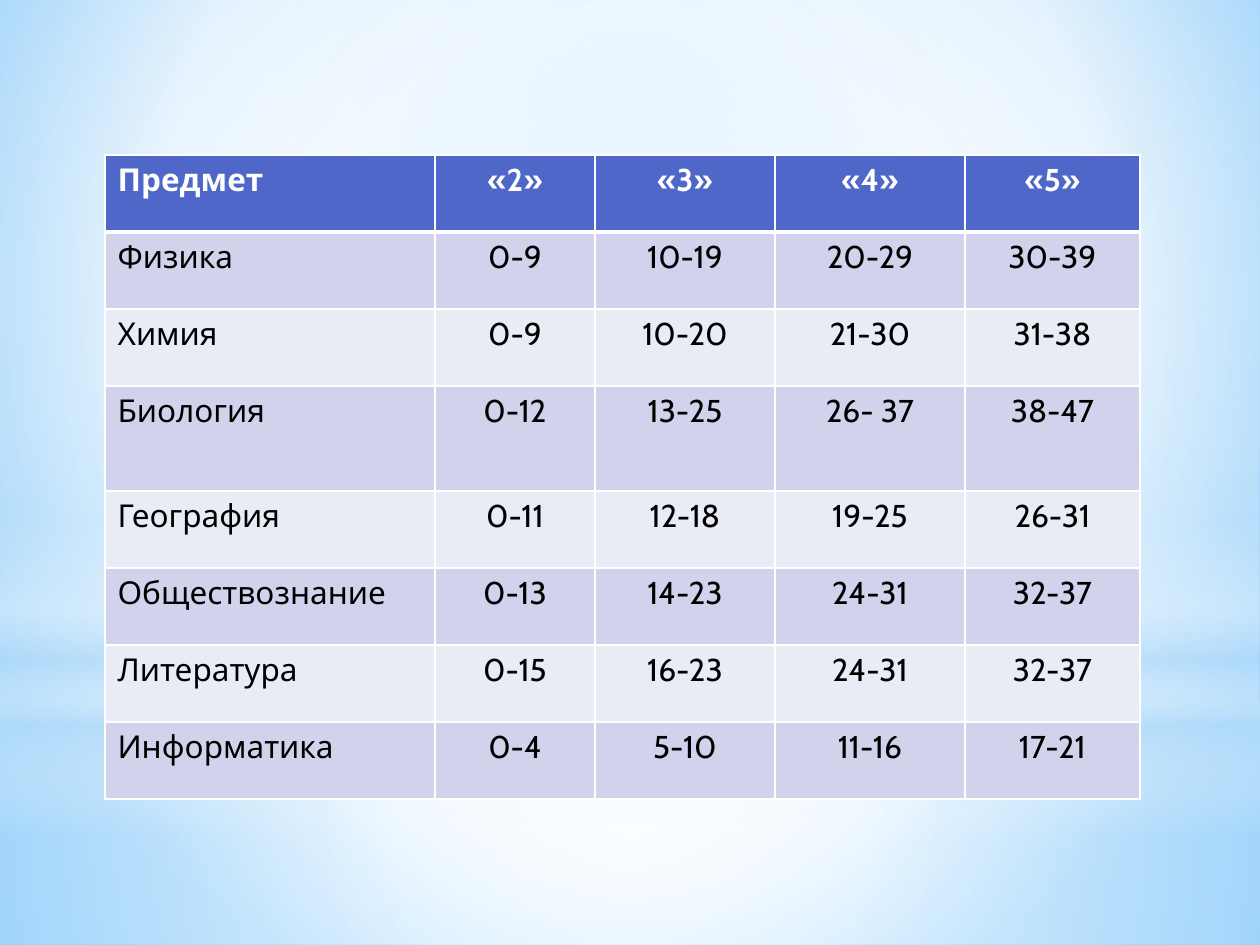
from lxml import etree
from pptx import Presentation
from pptx.dml.color import RGBColor
from pptx.enum.shapes import MSO_SHAPE
from pptx.enum.text import PP_ALIGN
from pptx.oxml.ns import qn
from pptx.util import Emu, Pt

RECT, OVAL = MSO_SHAPE.RECTANGLE, MSO_SHAPE.OVAL
LEFT, CENTER = PP_ALIGN.LEFT, PP_ALIGN.CENTER
PX = 914400 / 126
FONT = "Cabin"
COLORS = {
    "white": "FFFFFF", "black": "000000", "header": "4E67C8",
    "band": "D0D3EB", "light": "E9EBF5", "haze": "B4DCFA",
    "sky": "9ED5FF", "blue": "5BB9FF",
}
MIDDLE = (50, 50, 50, 50)

COL_WIDTHS = [330, 160, 180, 190, 175]
ROW_HEIGHTS = [77, 77, 77, 105, 77, 77, 77, 77]
GRADES = [
    ["Предмет", "«2»", "«3»", "«4»", "«5»"],
    ["Физика", "0-9", "10-19", "20-29", "30-39"],
    ["Химия", "0-9", "10-20", "21-30", "31-38"],
    ["Биология", "0-12", "13-25", "26- 37", "38-47"],
    ["География", "0-11", "12-18", "19-25", "26-31"],
    ["Обществознание", "0-13", "14-23", "24-31", "32-37"],
    ["Литература", "0-15", "16-23", "24-31", "32-37"],
    ["Информатика", "0-4", "5-10", "11-16", "17-21"],
]


def px(n):
    return Emu(round(n * PX))


def rgb(name):
    return RGBColor.from_string(COLORS[name])


def add_color(parent, name):
    return etree.SubElement(parent, qn("a:srgbClr"), val=COLORS[name])


def set_gradient(owner, element, stops, center=None):
    """Fill with (position, colour, opacity) stops: circular around center, else downwards."""
    owner.fill.gradient()
    old = element.find(".//" + qn("a:gradFill"))
    grad = etree.Element(qn("a:gradFill"), rotWithShape="1")
    gs_list = etree.SubElement(grad, qn("a:gsLst"))
    for pos, name, opacity in stops:
        gs = etree.SubElement(gs_list, qn("a:gs"), pos=str(pos * 1000))
        color = add_color(gs, name)
        if opacity < 100:
            etree.SubElement(color, qn("a:alpha"), val=str(opacity * 1000))
    if center:
        circle = etree.SubElement(grad, qn("a:path"), path="circle")
        sides = {side: str(n * 1000) for side, n in zip("ltrb", center)}
        etree.SubElement(circle, qn("a:fillToRect"), **sides)
    else:
        etree.SubElement(grad, qn("a:lin"), ang="5400000", scaled="0")
    old.getparent().replace(old, grad)


def add_glow(slide, kind, top, height, stops, center=None):
    s = slide.shapes.add_shape(kind, 0, px(top), px(1260), px(height))
    s.shadow.inherit = False
    s.line.fill.background()
    set_gradient(s, s._element, stops, center)


def add_backdrop(slide):
    set_gradient(slide.background, slide._element,
                 [(0, "sky", 100), (60, "white", 100), (100, "blue", 100)],
                 (20, 10, 20, 60))
    add_glow(slide, RECT, 703, 242,
             [(0, "white", 91), (37, "white", 76), (100, "haze", 79)], MIDDLE)
    add_glow(slide, RECT, 0, 703,
             [(0, "white", 89), (48, "white", 62), (100, "haze", 79)], MIDDLE)
    add_glow(slide, RECT, 519, 315,
             [(0, "white", 0), (29, "white", 30), (45, "haze", 40),
              (55, "white", 26), (65, "haze", 60), (100, "white", 0)])
    add_glow(slide, OVAL, 220, 703,
             [(0, "white", 100), (56, "white", 0)], MIDDLE)


def set_borders(cell, top, bottom):
    tc_pr = cell._tc.get_or_add_tcPr()
    for i, (side, width) in enumerate(zip("LRTB", (1, 1, top, bottom))):
        ln = etree.Element(qn("a:ln" + side), w=str(Pt(width)))
        add_color(etree.SubElement(ln, qn("a:solidFill")), "white")
        tc_pr.insert(i, ln)


def fill_cell(cell, text, row, col):
    header = row == 0
    cell.fill.solid()
    cell.fill.fore_color.rgb = rgb("header" if header else "band" if row % 2 else "light")
    set_borders(cell, 3 if row == 1 else 1, 3 if header else 1)
    p = cell.text_frame.paragraphs[0]
    p.alignment = CENTER if col else LEFT
    r = p.add_run()
    r.text = text
    r.font.name = FONT
    r.font.size = Pt(18)
    r.font.bold = header
    r.font.color.rgb = rgb("white" if header else "black")


def add_grade_table(slide):
    table = slide.shapes.add_table(
        len(GRADES), len(COL_WIDTHS), px(105), px(155),
        px(sum(COL_WIDTHS)), px(sum(ROW_HEIGHTS))).table
    for column, width in zip(table.columns, COL_WIDTHS):
        column.width = px(width)
    for table_row, height in zip(table.rows, ROW_HEIGHTS):
        table_row.height = px(height)
    for row, values in enumerate(GRADES):
        for col, text in enumerate(values):
            fill_cell(table.cell(row, col), text, row, col)


def main():
    prs = Presentation()
    prs.slide_width, prs.slide_height = px(1260), px(945)
    slide = prs.slides.add_slide(prs.slide_layouts[6])
    add_backdrop(slide)
    add_grade_table(slide)
    prs.save("out.pptx")


if __name__ == "__main__":
    main()
